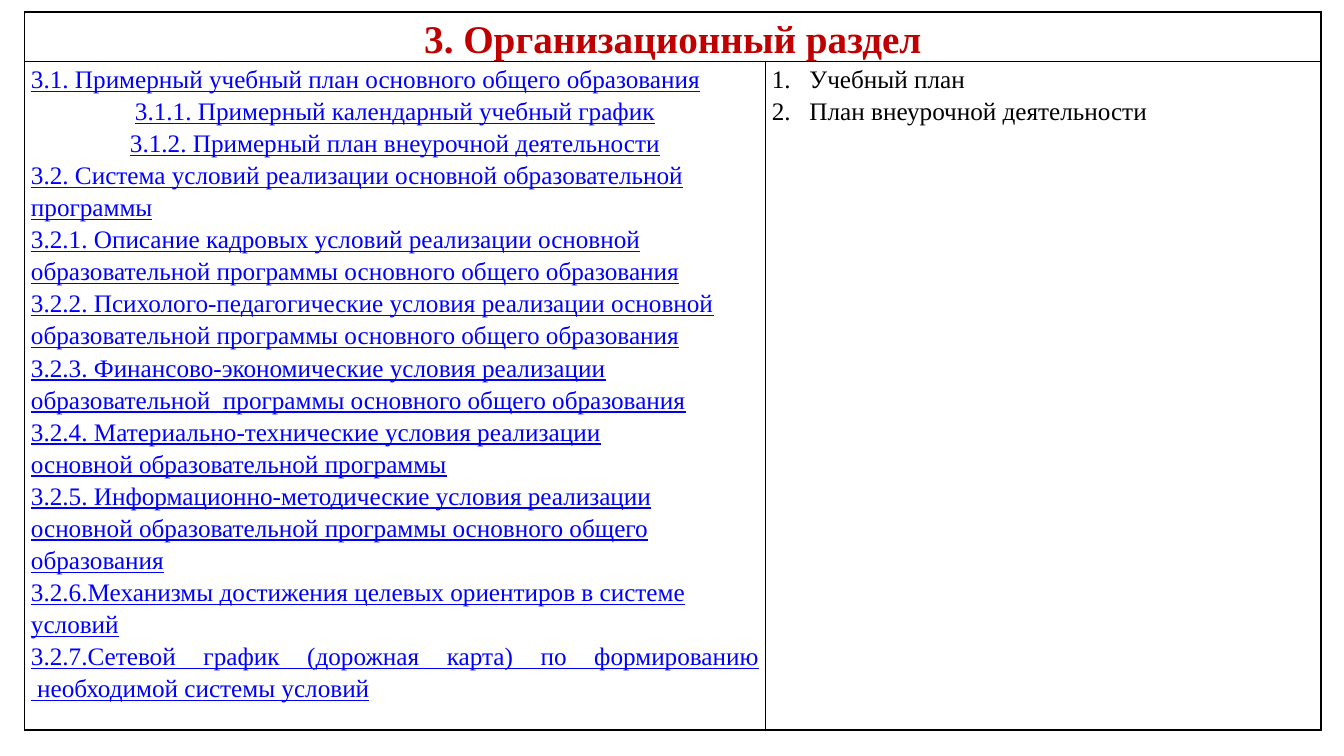
import pptx
import pptx.util
import pptx.dml.color
import pptx.enum.text
import pptx.oxml.ns
from lxml import etree

Cm = pptx.util.Cm
Pt = pptx.util.Pt
ALIGN = pptx.enum.text.PP_ALIGN
qn = pptx.oxml.ns.qn

COLORS = {"heading": "C00000", "link": "0000FF", "text": "000000", "border": "000000"}


def write_paragraph(text, cell, first=False, size=18, color="text", bold=False,
                    underline=False, align=ALIGN.LEFT, numbered=False):
    frame = cell.text_frame
    paragraph = frame.paragraphs[0] if first else frame.add_paragraph()
    paragraph.text = text
    paragraph.alignment = align
    paragraph.line_spacing = 1.15
    if numbered:
        properties = paragraph._p.get_or_add_pPr()
        properties.set("marL", str(Cm(0.95)))
        properties.set("indent", str(-Cm(0.95)))
        etree.SubElement(properties, qn("a:buFont"), typeface="+mj-lt")
        etree.SubElement(properties, qn("a:buAutoNum"), type="arabicPeriod")
    for run in paragraph.runs:
        run.font.name = "Times New Roman"
        run.font.size = Pt(size)
        run.font.bold = bold
        run.font.underline = underline
        run.font.color.rgb = pptx.dml.color.RGBColor.from_string(COLORS[color])


def format_cell(cell):
    cell.margin_left = cell.margin_right = Cm(0.16)
    cell.margin_top = cell.margin_bottom = 0
    properties = cell._tc.get_or_add_tcPr()
    for side in ("a:lnL", "a:lnR", "a:lnT", "a:lnB"):
        line = etree.SubElement(properties, qn(side), w=str(Pt(1)))
        fill = etree.SubElement(line, qn("a:solidFill"))
        etree.SubElement(fill, qn("a:srgbClr"), val=COLORS["border"])
    cell.fill.background()


presentation = pptx.Presentation()
presentation.slide_width = Cm(33.87)
presentation.slide_height = Cm(19.05)
slide = presentation.slides.add_slide(presentation.slide_layouts[6])

column_widths = [18.67, 14]
row_heights = [0.79, 16.84]
table = slide.shapes.add_table(2, 2, Cm(0.62), Cm(0.3), Cm(sum(column_widths)),
                               Cm(sum(row_heights))).table
table.first_row = False
table.horz_banding = False
for column, width in zip(table.columns, column_widths):
    column.width = Cm(width)
for row, height in zip(table.rows, row_heights):
    row.height = Cm(height)
for cell in table.iter_cells():
    format_cell(cell)

heading = table.cell(0, 0)
heading.merge(table.cell(0, 1))
write_paragraph("3. Организационный раздел", heading, first=True, size=28,
                color="heading", bold=True, align=ALIGN.CENTER)

contents = [
    ("3.1. Примерный учебный план основного общего образования", ALIGN.LEFT),
    ("3.1.1. Примерный календарный учебный график", ALIGN.CENTER),
    ("3.1.2. Примерный план внеурочной деятельности", ALIGN.CENTER),
    ("3.2. Система условий реализации основной образовательной программы", ALIGN.LEFT),
    ("3.2.1. Описание кадровых условий реализации основной образовательной программы "
     "основного общего образования", ALIGN.LEFT),
    ("3.2.2. Психолого-педагогические условия реализации основной образовательной программы "
     "основного общего образования", ALIGN.LEFT),
    ("3.2.3. Финансово-экономические условия реализации образовательной  программы "
     "основного общего образования", ALIGN.LEFT),
    ("3.2.4. Материально-технические условия реализации\n"
     "основной образовательной программы", ALIGN.LEFT),
    ("3.2.5. Информационно-методические условия реализации\n"
     "основной образовательной программы основного общего образования", ALIGN.LEFT),
    ("3.2.6.Механизмы достижения целевых ориентиров в системе условий", ALIGN.LEFT),
    ("3.2.7.Сетевой график (дорожная карта) по формированию\n"
     " необходимой системы условий", ALIGN.JUSTIFY),
]
for index, (text, align) in enumerate(contents):
    write_paragraph(text, table.cell(1, 0), first=index == 0, color="link",
                    underline=True, align=align)

plans = ["Учебный план", "План внеурочной деятельности"]
for index, text in enumerate(plans):
    write_paragraph(text, table.cell(1, 1), first=index == 0, align=ALIGN.JUSTIFY, numbered=True)

presentation.save("out.pptx")
